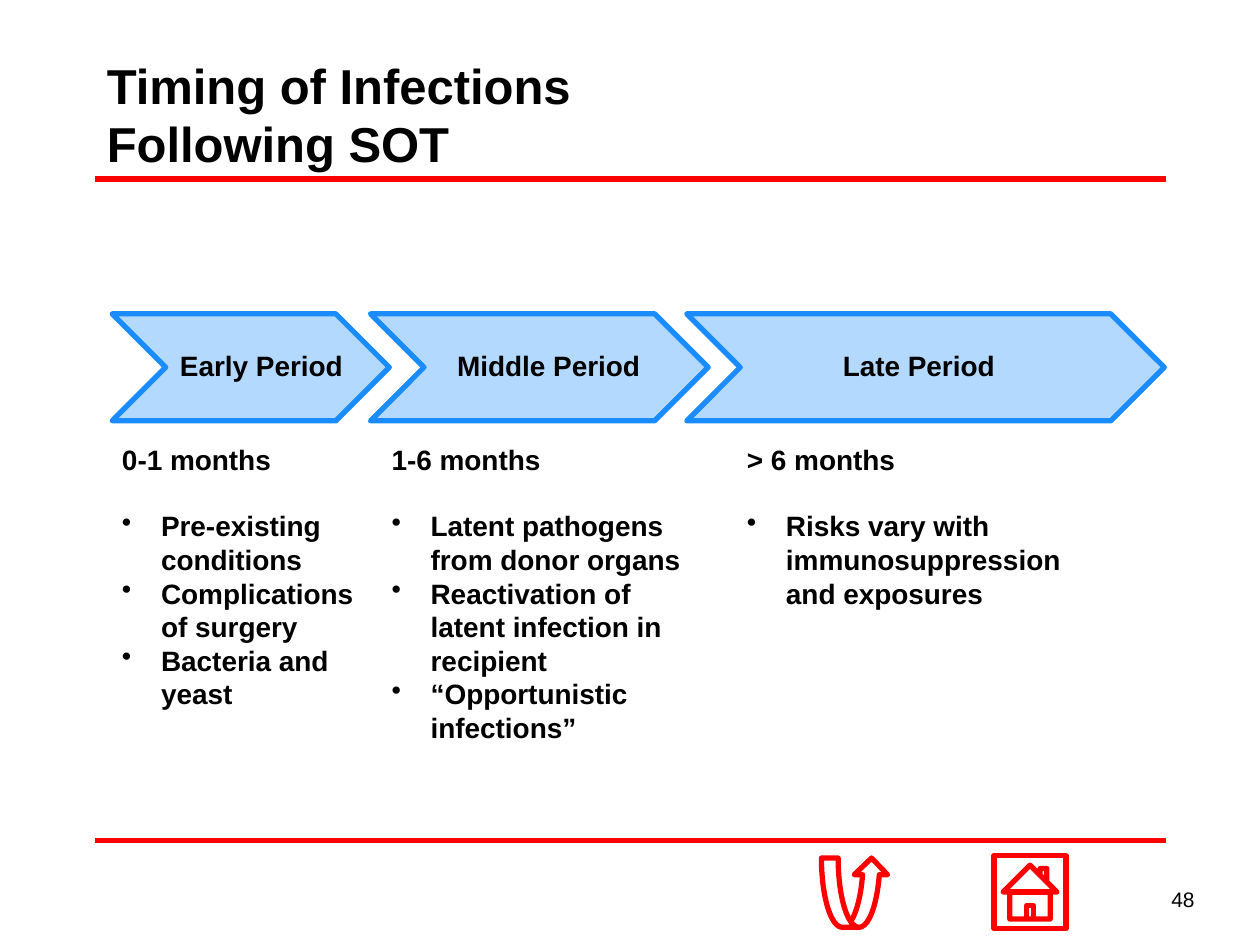
import pptx
import pptx.util
import pptx.dml.color
import pptx.enum.shapes
import pptx.enum.text
import pptx.oxml
import pptx.oxml.ns
import lxml.etree

Inches = pptx.util.Inches
Pt = pptx.util.Pt
Kind = pptx.enum.shapes.MSO_SHAPE
Anchor = pptx.enum.text.MSO_ANCHOR
Align = pptx.enum.text.PP_ALIGN


def paint(form, code):
    if hasattr(form, "solid"):
        form.solid()
        form = form.fore_color
    form.rgb = pptx.dml.color.RGBColor.from_string(code)


def write(text, box, size=16, bold=True, anchor=Anchor.TOP, align=Align.LEFT, points=()):
    frame = slide.shapes.add_textbox(*map(Inches, box)).text_frame
    frame.word_wrap = True
    frame.vertical_anchor = anchor
    for i, line in enumerate([text, *points]):
        para = frame.add_paragraph() if i else frame.paragraphs[0]
        para.text = line
        para.alignment = align
        para.font.name = "Arial"
        for run in para.runs:
            run.font.name = "Arial"
            run.font.size = Pt(size)
            run.font.bold = bold
            paint(run.font.color, "000000")
        if i:
            props = para._p.get_or_add_pPr()
            props.set("marL", str(Inches(0.31)))
            props.set("indent", str(-Inches(0.31)))
            mark = lxml.etree.SubElement(props, pptx.oxml.ns.qn("a:buChar"))
            mark.set("char", "•")
            props.insert(0, mark)
        elif points:
            para.space_after = Pt(19)


deck = pptx.Presentation()
deck.slide_width = Inches(10)
deck.slide_height = Inches(7.5)
slide = deck.slides.add_slide(deck.slide_layouts[6])

for top in (1.42, 6.67):
    rule = slide.shapes.add_connector(
        pptx.enum.shapes.MSO_CONNECTOR.STRAIGHT,
        Inches(0.75), Inches(top), Inches(9.25), Inches(top))
    paint(rule.line.fill, "FF0000")
    rule.line.width = Pt(3)
    lxml.etree.SubElement(rule._element.spPr, pptx.oxml.ns.qn("a:effectLst"))

write("Timing of Infections \vFollowing SOT", (0.75, 0.42, 8.5, 1), size=28, anchor=Anchor.BOTTOM)
write("48", (7.25, 6.94, 2.33, 0.4), size=12, bold=False, anchor=Anchor.MIDDLE, align=Align.RIGHT)

shapes = [
    (Kind.CHEVRON, (0.89, 2.49, 2.2, 0.85), "B3D9FF", "1A8CFF"),
    (Kind.CHEVRON, (2.94, 2.49, 2.68, 0.85), "B3D9FF", "1A8CFF"),
    (Kind.CHEVRON, (5.45, 2.49, 3.79, 0.85), "B3D9FF", "1A8CFF"),
    (Kind.ACTION_BUTTON_HOME, (7.89, 6.79, 0.57, 0.58), None, "FF0000"),
    (Kind.CURVED_UP_ARROW, (6.52, 6.81, 0.53, 0.55), None, "FF0000"),
]
for kind, box, fill, edge in shapes:
    shape = slide.shapes.add_shape(kind, *map(Inches, box))
    shape.shadow.inherit = False
    if fill:
        paint(shape.fill, fill)
    else:
        shape.fill.background()
    paint(shape.line.fill, edge)
    shape.line.width = Pt(3)

stages = [
    ("Early Period", 1.33, "0-1 months", (0.87, 3.46, 2.14, 2.26),
     ["Pre-existing conditions", "Complications of surgery", "Bacteria and yeast"]),
    ("Middle Period", 3.53, "1-6 months", (3.01, 3.46, 2.53, 2.52),
     ["Latent pathogens from donor organs", "Reactivation of latent infection in recipient",
      "“Opportunistic infections”"]),
    ("Late Period", 6.59, "> 6 months", (5.83, 3.46, 3.03, 1.72),
     ["Risks vary with immunosuppression and exposures"]),
]
for name, left, span, box, points in stages:
    write(name, (left, 2.72, 1.68, 0.37))
    write(span, box, points=points)

deck.save("out.pptx")
